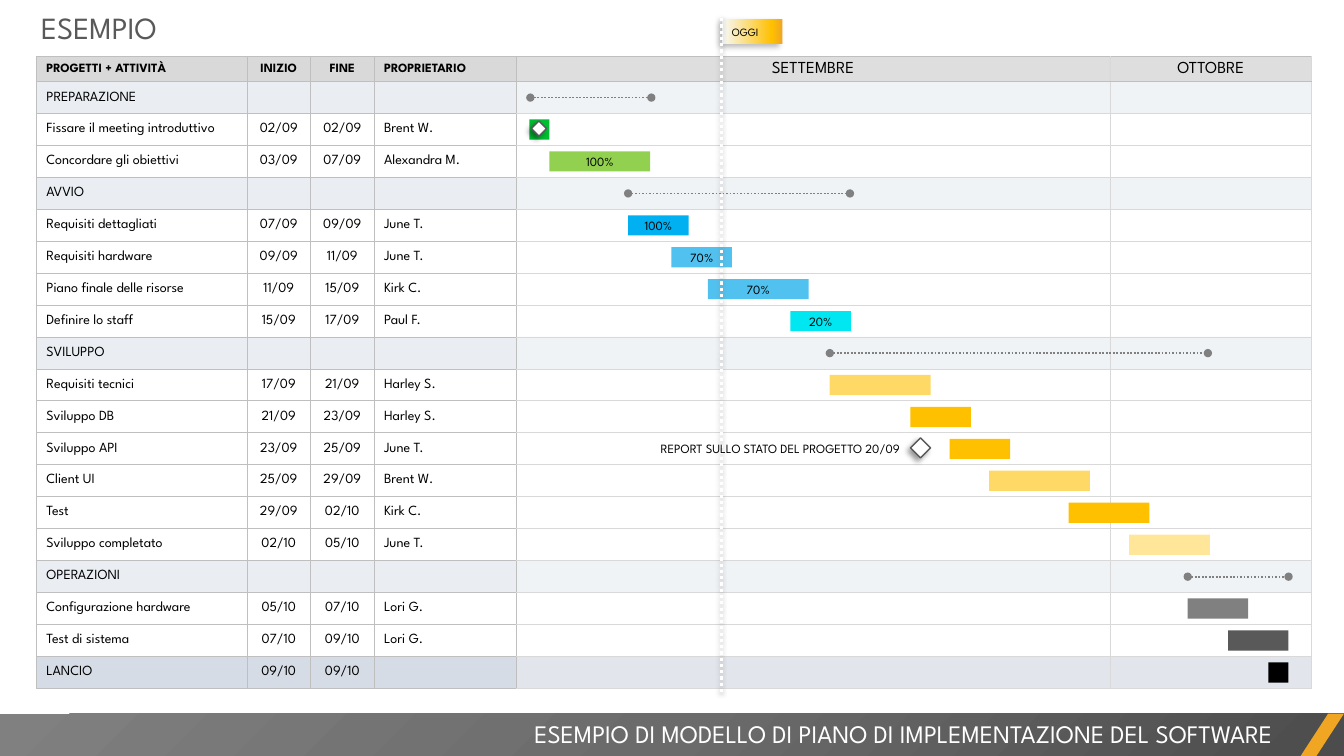
import pptx
import pptx.util
import pptx.dml.color
import pptx.enum.dml
import pptx.enum.shapes
import pptx.enum.text
import pptx.oxml

Inches = pptx.util.Inches
Pt = pptx.util.Pt
Color = pptx.dml.color.RGBColor
Shape = pptx.enum.shapes.MSO_SHAPE
Align = pptx.enum.text.PP_ALIGN
Anchor = pptx.enum.text.MSO_ANCHOR
DRAWING = 'xmlns:a="http://schemas.openxmlformats.org/drawingml/2006/main"'

FONT = "League Spartan"
WHITE, BLACK = Color(255, 255, 255), Color(0, 0, 0)
RULE, GRID = Color(0xBF, 0xBF, 0xBF), Color(0xD9, 0xD9, 0xD9)
PHASE, LAUNCH = Color(0xEA, 0xEE, 0xF3), Color(0xD6, 0xDC, 0xE5)
GRAY, DARK = Color(0x80, 0x80, 0x80), Color(0x59, 0x59, 0x59)
DEEP, MEDIUM = Color(0x4C, 0x4C, 0x4C), Color(0x6B, 0x6B, 0x6B)
ICE, ORANGE = Color(0xF7, 0xFA, 0xFD), Color(0xF0, 0xA6, 0x22)
GREEN, LIME = Color(0, 0xBD, 0x32), Color(0x92, 0xD0, 0x50)
BLUE, SKY, CYAN = Color(0, 0xB0, 0xF0), Color(0x51, 0xC2, 0xF0), Color(0, 0xE7, 0xF2)
AMBER, GOLD, CREAM = Color(0xFF, 0xC0, 0), Color(0xFF, 0xD9, 0x66), Color(0xFF, 0xE6, 0x99)

HEADER = ("PROGETTI + ATTIVITÀ", "INIZIO", "FINE", "PROPRIETARIO", "SETTEMBRE", "OTTOBRE")
COLUMNS = (2.09, 0.63, 0.63, 1.41, 5.89, 2)
HEADER_HEIGHT = 0.25
DAY = 0.2
REPORT_ROW = 11

ROWS = (
    ("PREPARAZIONE", "", "", "", 5.26, 6, None, ""),
    ("Fissare il meeting introduttivo", "02/09", "02/09", "Brent W.", 5.25, 1, GREEN, ""),
    ("Concordare gli obiettivi", "03/09", "07/09", "Alexandra M.", 5.45, 5, LIME, "100%"),
    ("AVVIO", "", "", "", 6.23, 11, None, ""),
    ("Requisiti dettagliati", "07/09", "09/09", "June T.", 6.23, 3, BLUE, "100%"),
    ("Requisiti hardware", "09/09", "11/09", "June T.", 6.66, 3, SKY, "70%"),
    ("Piano finale delle risorse", "11/09", "15/09", "Kirk C.", 7.02, 5, SKY, "70%"),
    ("Definire lo staff", "15/09", "17/09", "Paul F.", 7.84, 3, CYAN, "20%"),
    ("SVILUPPO", "", "", "", 8.23, 18.75, None, ""),
    ("Requisiti tecnici", "17/09", "21/09", "Harley S.", 8.23, 5, GOLD, ""),
    ("Sviluppo DB", "21/09", "23/09", "Harley S.", 9.03, 3, AMBER, ""),
    ("Sviluppo API", "23/09", "25/09", "June T.", 9.42, 3, AMBER, ""),
    ("Client UI", "25/09", "29/09", "Brent W.", 9.81, 5, GOLD, ""),
    ("Test", "29/09", "02/10", "Kirk C.", 10.6, 4, AMBER, ""),
    ("Sviluppo completato", "02/10", "05/10", "June T.", 11.2, 4, CREAM, ""),
    ("OPERAZIONI", "", "", "", 11.78, 5, None, ""),
    ("Configurazione hardware", "05/10", "07/10", "Lori G.", 11.78, 3, GRAY, ""),
    ("Test di sistema", "07/10", "09/10", "Lori G.", 12.18, 3, DARK, ""),
    ("LANCIO", "09/10", "09/10", "", 12.58, 1, BLACK, ""),
)


def add_xml(parent, markup):
    """Append one drawing element to the parent."""
    element = pptx.oxml.parse_xml(markup.replace(" ", f" {DRAWING} ", 1))
    parent.append(element)
    return element


def write(frame, text, size, color=BLACK, align=Align.LEFT, bold=False):
    """Write one run into the frame's first paragraph."""
    para = frame.paragraphs[0]
    para.alignment = align
    if not text:
        add_xml(para._p, f'<a:endParaRPr sz="{size * 100}"/>')
        return
    span = para.add_run()
    span.text = text
    span.font.name, span.font.size, span.font.bold = FONT, Pt(size), bold
    span.font.color.rgb = color


def add_text(slide, box, text, size, color, align=Align.LEFT, anchor=Anchor.TOP):
    """Place a wrapping text box."""
    frame = slide.shapes.add_textbox(*map(Inches, box)).text_frame
    frame.word_wrap = True
    frame.vertical_anchor = anchor
    write(frame, text, size, color, align)


def add_block(shapes, kind, box, color=None, outline=None):
    """Place a flat preset shape."""
    block = shapes.add_shape(kind, *map(Inches, box))
    block.shadow.inherit = False
    if color is not None:
        block.fill.solid()
        block.fill.fore_color.rgb = color
    if outline is None:
        block.line.fill.background()
    else:
        block.line.color.rgb = outline
        block.line.width = Pt(1)
    return block


def add_shadow(shape, color, opacity, blur, distance):
    """Cast a shadow to the lower left of the shape."""
    properties = shape._element.spPr
    for empty in properties.findall(pptx.oxml.ns.qn("a:effectLst")):
        properties.remove(empty)
    add_xml(properties, f'<a:effectLst ><a:outerShdw blurRad="{Pt(blur)}" dist="{Pt(distance)}" '
            f'dir="8100000" algn="tr" rotWithShape="0"><a:srgbClr val="{color}">'
            f'<a:alpha val="{opacity * 1000}"/></a:srgbClr></a:outerShdw></a:effectLst>')


def add_gradient(shape, stops, direction):
    """Fill the shape with a gradient running in the given direction."""
    marks = "".join(f'<a:gs pos="{place * 1000}"><a:srgbClr val="{color}"/></a:gs>'
                    for place, color in stops)
    gradient = add_xml(shape._element.spPr,
                       f'<a:gradFill rotWithShape="1"><a:gsLst>{marks}</a:gsLst>{direction}</a:gradFill>')
    shape._element.spPr.find(pptx.oxml.ns.qn("a:prstGeom")).addnext(gradient)


def add_dotted_line(shapes, start, end, color, width):
    """Draw a straight dotted line between two points."""
    line = shapes.add_connector(pptx.enum.shapes.MSO_CONNECTOR.STRAIGHT,
                                *map(Inches, start + end))
    line.line.color.rgb = color
    line.line.width = Pt(width)
    line.line.dash_style = pptx.enum.dml.MSO_LINE.ROUND_DOT
    add_xml(line._element.spPr, "<a:effectLst />")
    return line


def style_cell(cell, color, opacity, borders):
    """Set the cell's left, right, top and bottom borders, then its fill."""
    properties = cell._tc.get_or_add_tcPr()
    for side, border in zip("LRTB", borders):
        add_xml(properties, f'<a:ln{side} w="{Pt(0.5)}"><a:solidFill><a:srgbClr val="{border}"/>'
                f'</a:solidFill></a:ln{side}>')
    cell.fill.solid()
    cell.fill.fore_color.rgb = color
    if opacity < 100:
        add_xml(next(properties.iterchildren(pptx.oxml.ns.qn("a:solidFill")))[0],
                f'<a:alpha val="{opacity * 1000}"/>')
    cell.vertical_anchor = Anchor.MIDDLE


def add_plan_table(slide, box, row_height):
    """Build the task table with its two month columns."""
    table = slide.shapes.add_table(len(ROWS) + 1, len(COLUMNS), *map(Inches, box)).table
    table.first_row = table.horz_banding = False
    for column, width in zip(table.columns, COLUMNS):
        column.width = Inches(width)
    for index, row in enumerate((HEADER,) + ROWS):
        header = index == 0
        table.rows[index].height = Inches(HEADER_HEIGHT if header else row_height)
        phase = not header and row[6] is None
        tint = PHASE if phase else LAUNCH if row[0] == "LANCIO" else WHITE
        for place in range(len(COLUMNS)):
            cell = table.cell(index, place)
            month = place > 3
            color = (RULE if month else GRID) if header else tint
            opacity = 100 if not month else 50 if header or tint == WHITE else 70
            borders = [RULE] * 4
            if month:
                borders = [RULE if place == 4 else GRID, GRID,
                           RULE if index < 2 else GRID, RULE if header else GRID]
            style_cell(cell, color, opacity, borders)
            if month:
                cell.margin_left = cell.margin_right = cell.margin_top = cell.margin_bottom = 0
            text = row[place] if header or not month else ""
            size = 10 if not header else 12 if month else 9
            align = Align.LEFT if place in (0, 3) else Align.CENTER
            write(cell.text_frame, text, size, align=align, bold=header and not month)


def row_middle(box, row_height, index):
    """Return the vertical middle of a task row."""
    return box[1] + HEADER_HEIGHT + row_height * (index + 0.5)


def add_diamond(slide, left, middle, size):
    """Mark a milestone with a shadowed diamond."""
    diamond = add_block(slide.shapes, Shape.DIAMOND, (left, middle - size / 2, size, size), WHITE, DARK)
    add_shadow(diamond, BLACK, 40, 4, 3)


def add_schedule(slide, box, row_height):
    """Draw phase spans, task bars and the kickoff milestone over the table rows."""
    for index, row in enumerate(ROWS):
        middle = row_middle(box, row_height, index)
        left, days, color, progress = row[4:]
        width = days * DAY
        if color is None:
            span_line = add_dotted_line(slide.shapes, (left, middle), (left + width, middle), GRAY, 1.25)
            for end in ("head", "tail"):
                add_xml(span_line.line._get_or_add_ln(), f'<a:{end}End type="oval"/>')
            continue
        bar = add_block(slide.shapes, Shape.RECTANGLE, (left, middle - 0.1, width, 0.2), color)
        if progress:
            write(bar.text_frame, progress, 9, align=Align.CENTER)
    add_diamond(slide, 5.27, row_middle(box, row_height, 1) - 0.01, 0.15)


def add_report(slide, box, row_height):
    """Place the status report milestone and its label."""
    middle = row_middle(box, row_height, REPORT_ROW) - 0.01
    add_diamond(slide, 9.03, middle, 0.2)
    add_text(slide, (6.04, middle - 0.14, 2.98, 0.3), "REPORT SULLO STATO DEL PROGETTO 20/09",
             9, BLACK, Align.RIGHT, Anchor.MIDDLE)


def add_today(slide, box):
    """Draw the today flag and its vertical dotted line."""
    left, top, width, height = box
    group = slide.shapes.add_group_shape()
    flag = add_block(group.shapes, Shape.RECTANGLE, (left, top + 0.01, width, 0.25))
    add_gradient(flag, ((0, ICE), (83, AMBER), (100, ORANGE)), '<a:lin ang="0" scaled="0"/>')
    add_shadow(flag, BLACK, 25, 4, 3)
    write(flag.text_frame, "OGGI", 8)
    line = add_dotted_line(group.shapes, (left, top), (left, top + height), WHITE, 2.25)
    add_shadow(line, GRAY, 50, 3, 1)


def add_footer(slide, box):
    """Draw the footer band, its slanted accent and its caption."""
    left, top, width, height = box
    band = add_block(slide.shapes, Shape.RECTANGLE, box)
    add_gradient(band, ((0, DEEP), (50, MEDIUM), (100, GRAY)),
                 '<a:path path="circle"><a:fillToRect l="100000" t="100000"/></a:path>')
    accent = add_block(slide.shapes, Shape.PARALLELOGRAM, (left + width - 0.43, top, 0.43, height), ORANGE)
    accent.adjustments[0] = 0.65
    add_text(slide, (left + 0.8, top, 11.92, 0.4),
             "ESEMPIO DI MODELLO DI PIANO DI IMPLEMENTAZIONE DEL SOFTWARE", 18, WHITE, Align.RIGHT)


def main():
    """Build the plan slide and save the deck."""
    deck = pptx.Presentation()
    deck.slide_width, deck.slide_height = Inches(13.33), Inches(7.5)
    slide = deck.slides.add_slide(deck.slide_layouts[6])
    plan = (0.36, 0.56, 12.66, 6.27)
    row_height = (plan[3] - HEADER_HEIGHT) / len(ROWS)
    add_footer(slide, (0, 7.08, 13.33, 0.42))
    add_plan_table(slide, plan, row_height)
    add_schedule(slide, plan, row_height)
    add_today(slide, (7.16, 0.18, 0.6, 6.7))
    add_report(slide, plan, row_height)
    add_text(slide, (0.31, 0.04, 6.62, 0.47), "ESEMPIO", 22, DARK)
    deck.save("out.pptx")


if __name__ == "__main__":
    main()
